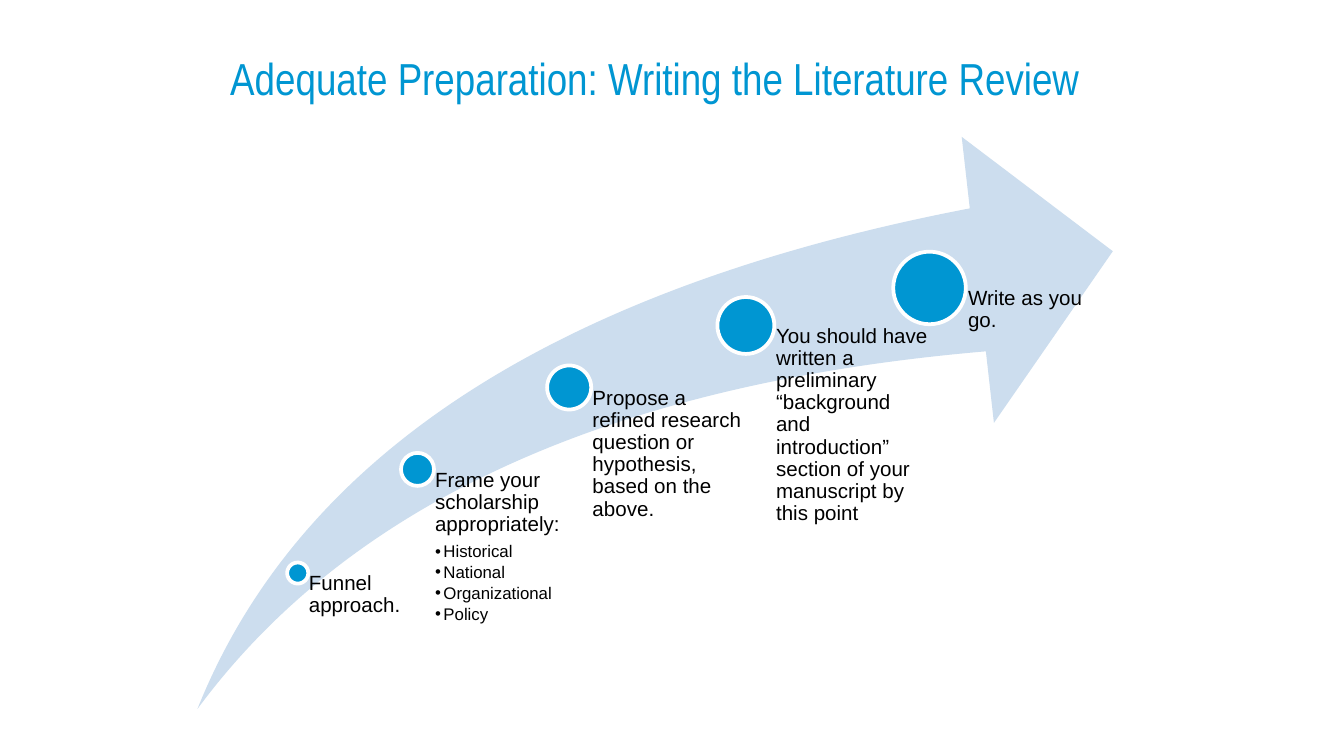
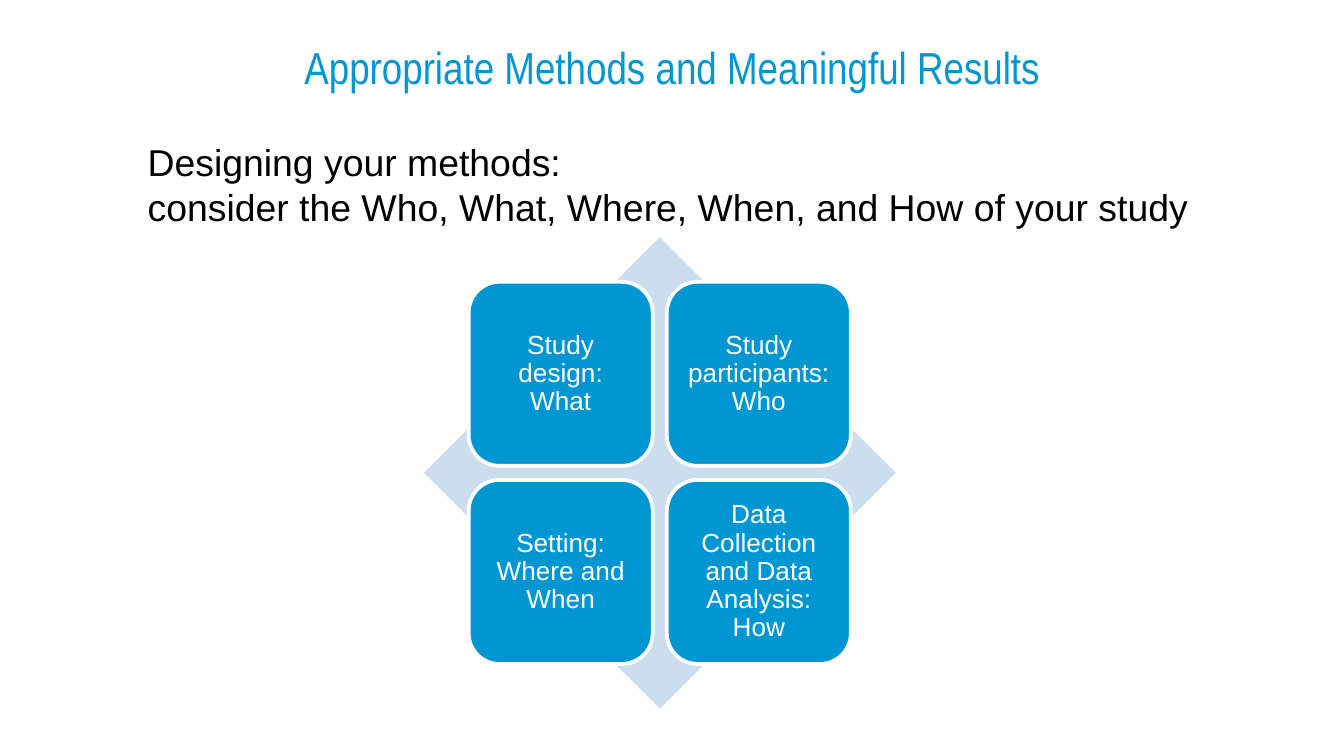
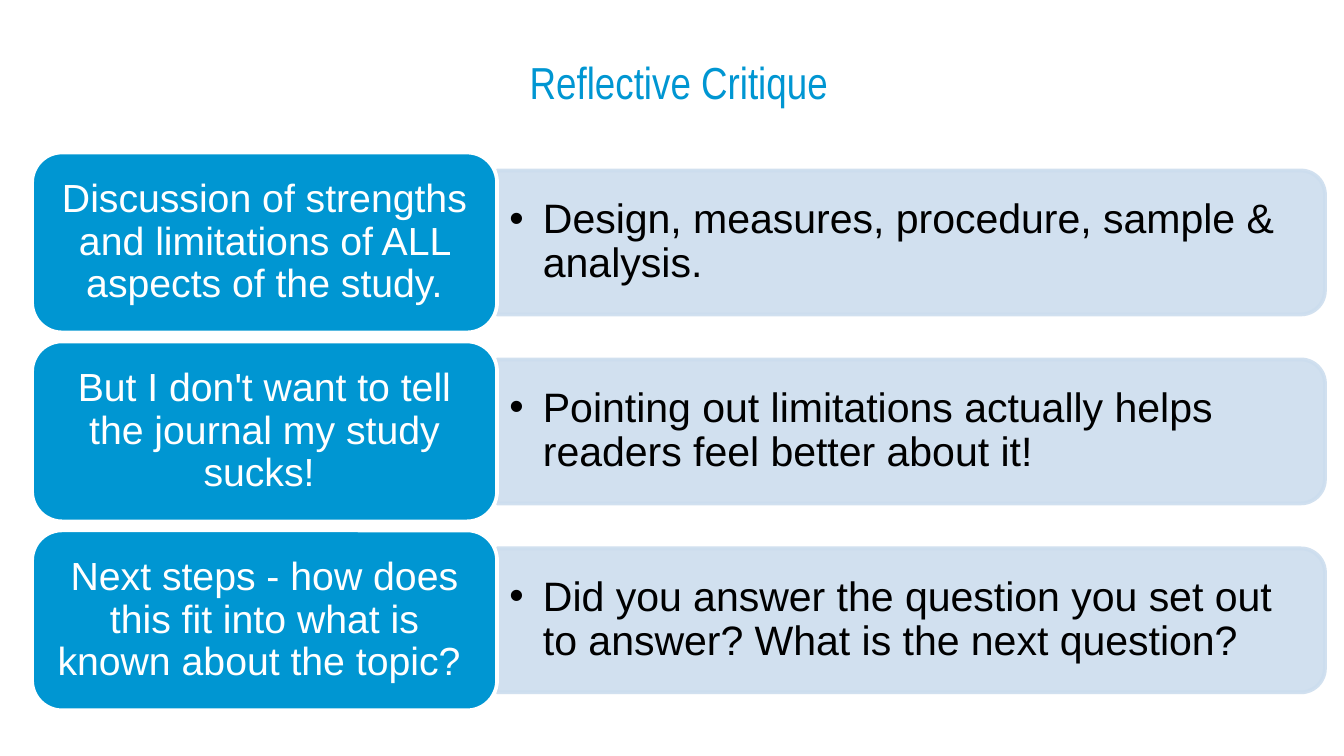
from pptx import Presentation
from pptx import util as u
from pptx.dml.color import RGBColor
from pptx.enum import shapes, text
from pptx.oxml.ns import qn
from lxml import etree

TITLES = [
    ("Adequate Preparation: Writing the Literature Review", (92.2, 24.5, 517, 35.3)),
    ("Appropriate Methods and Meaningful Results", (143.3, 8, 433.4, 46)),
    ("Reflective Critique", (179.3, 26.6, 368.6, 35.3)),
]
STEPS = [
    ("Funnel approach.", [], (159.5, 307), 11.3, 64.3),
    ("Frame your scholarship appropriately:",
     ["Historical", "National", "Organizational", "Policy"], (223.7, 251.5), 17.7, 81.4),
    ("Propose a refined research question or hypothesis, based on the above.",
     [], (304.9, 207.6), 23.6, 94.3),
    ("You should have written a preliminary “background and introduction” "
     "section of your manuscript by this point", [], (399.6, 174.4), 30.5, 98.1),
    ("Write as you go.", [], (498, 154.3), 38.9, 98.1),
]
METHODS_INTRO = ["Designing your methods:",
                 "consider the Who, What, Where, When, and How of your study"]
METHODS = ["Study design: What", "Study participants: Who",
           "Setting: Where and When", "Data Collection and Data Analysis: How"]
CRITIQUE = [
    ("Discussion of strengths and limitations of ALL aspects of the study.",
     "Design, measures, procedure, sample & analysis."),
    ("But I don't want to tell the journal my study sucks! ",
     "Pointing out limitations actually helps readers feel better about it!"),
    ("Next steps - how does this fit into what is known about the topic? ",
     "Did you answer the question you set out to answer? What is the next question?"),
]


class Theme:
    blue, pale, white, black = "0096D2", "CCDDEE", "FFFFFF", "000000"
    body, heading = "Arial", "Arial Narrow"
    title, intro, step, sub, cell, pill, bar = 24, 20, 11, 9, 14, 21, 22
    line, tight = 2, 0.9


SHAPE, ALIGN, ANCHOR = shapes.MSO_SHAPE, text.PP_ALIGN, text.MSO_ANCHOR


def rgb(value):
    return RGBColor.from_string(value)


def assign(obj, values):
    for name, value in values.items():
        setattr(obj, name, value)


def set_alpha(color_parent, percent):
    for clr in color_parent.iter(qn("a:srgbClr")):
        etree.SubElement(clr, qn("a:alpha"), val=str(percent * 1000))


def shape(s, kind, box, fill, line=None):
    sp = s.shapes.add_shape(kind, *map(u.Pt, box))
    sp.shadow.inherit = False
    sp.fill.solid()
    sp.fill.fore_color.rgb = rgb(fill)
    if line:
        sp.line.color.rgb = rgb(line)
        sp.line.width = u.Pt(Theme.line)
    else:
        sp.line.fill.background()
    return sp


def frame(sp, insets, anchor=ANCHOR.TOP, wrap=True):
    tf = sp.text_frame
    sides = ("margin_left", "margin_top", "margin_right", "margin_bottom")
    assign(tf, dict(zip(sides, map(u.Pt, insets)), word_wrap=wrap, vertical_anchor=anchor))
    return tf


def textbox(s, box, insets, anchor=ANCHOR.TOP, wrap=True):
    return frame(s.shapes.add_textbox(*map(u.Pt, box)), insets, anchor, wrap)


def write(tf, words, size, color=Theme.black, font=Theme.body, indent=0, **para):
    p = tf.paragraphs[0]
    if p.runs:
        p = tf.add_paragraph()
    assign(p, {"alignment": ALIGN.LEFT, "line_spacing": Theme.tight, **para})
    if indent:
        p.level = 1
        pPr = p._p.get_or_add_pPr()
        pPr.set("marL", str(u.Pt(indent)))
        pPr.set("indent", str(-u.Pt(indent)))
        etree.SubElement(pPr, qn("a:buFont"), typeface=Theme.body)
        etree.SubElement(pPr, qn("a:buChar"), char="•")
    r = p.add_run()
    r.text = words
    assign(r.font, {"size": u.Pt(size), "name": font})
    r.font.color.rgb = rgb(color)


def block(s, box, words, size, insets):
    sp = shape(s, SHAPE.ROUNDED_RECTANGLE, box, Theme.blue, Theme.white)
    write(frame(sp, insets, ANCHOR.MIDDLE), words, size, Theme.white, alignment=ALIGN.CENTER)


def draw_steps(s):
    bottom = 379.6
    swoosh = shape(s, SHAPE.SWOOSH_ARROW, (105.8, 73.3, 490.4, 306.5), Theme.pale)
    swoosh.adjustments[0] = swoosh.adjustments[1] = 0.25
    for words, subs, (x, y), d, width in STEPS:
        shape(s, SHAPE.OVAL, (x - d / 2, y - d / 2, d, d), Theme.blue, Theme.white)
        tf = textbox(s, (x, y, width, bottom - y), (d * 0.53, 0, 0, 0))
        write(tf, words, Theme.step, space_after=u.Pt(3.9))
        for sub in subs:
            write(tf, sub, Theme.sub, indent=4.5, space_after=u.Pt(1.4))


def draw_methods(s):
    left, top, size = 227.1, 127, 252.7
    side, pitch, offset = size * 0.39, size * 0.42, size * 0.095
    shape(s, SHAPE.DIAMOND, (left, top, size, size), Theme.pale)
    for i, words in enumerate(METHODS):
        row, col = divmod(i, 2)
        box = (left + offset + col * pitch, top + offset + row * pitch, side, side)
        block(s, box, words, Theme.cell, (4.2,) * 4)
    tf = textbox(s, (72, 71.3, 576, 80), (7.2, 3.6, 7.2, 3.6), wrap=False)
    tf.auto_size = text.MSO_AUTO_SIZE.SHAPE_TO_FIT_TEXT
    for words in METHODS_INTRO:
        write(tf, words, Theme.intro, line_spacing=1.0)


def draw_critique(s):
    left, top, pill_w, pill_h = 17.2, 81.7, 249.1, 96.4
    bar_x, bar_w, bar_h, text_w, text_h = left + pill_w, 443.5, pill_h * 0.8, 440, 69
    for i, (topic, answer) in enumerate(CRITIQUE):
        y = top + i * pill_h * 1.05
        mid = y + pill_h / 2
        box = (bar_x + (bar_w - bar_h) / 2, mid - bar_w / 2, bar_h, bar_w)
        bar = shape(s, SHAPE.ROUND_2_SAME_RECTANGLE, box, Theme.pale, Theme.pale)
        bar.rotation = 90
        set_alpha(bar._element.spPr, 90)
        tf = textbox(s, (bar_x, mid - text_h / 2, text_w, text_h),
                     (6.6, 3.3, 6.6, 3.3), ANCHOR.MIDDLE)
        write(tf, answer, Theme.bar, indent=18)
        block(s, (left, y, pill_w, pill_h), topic, Theme.pill, (6.3, 3.15, 6.3, 3.15))


def main():
    prs = Presentation()
    assign(prs, {"slide_width": u.Pt(720), "slide_height": u.Pt(405)})
    for (title, box), draw in zip(TITLES, (draw_steps, draw_methods, draw_critique)):
        s = prs.slides.add_slide(prs.slide_layouts[6])
        tf = textbox(s, box, (7.2, 3.6, 7.2, 3.6), ANCHOR.BOTTOM)
        write(tf, title, Theme.title, Theme.blue, Theme.heading, alignment=ALIGN.CENTER)
        draw(s)
    prs.save("out.pptx")


if __name__ == "__main__":
    main()
